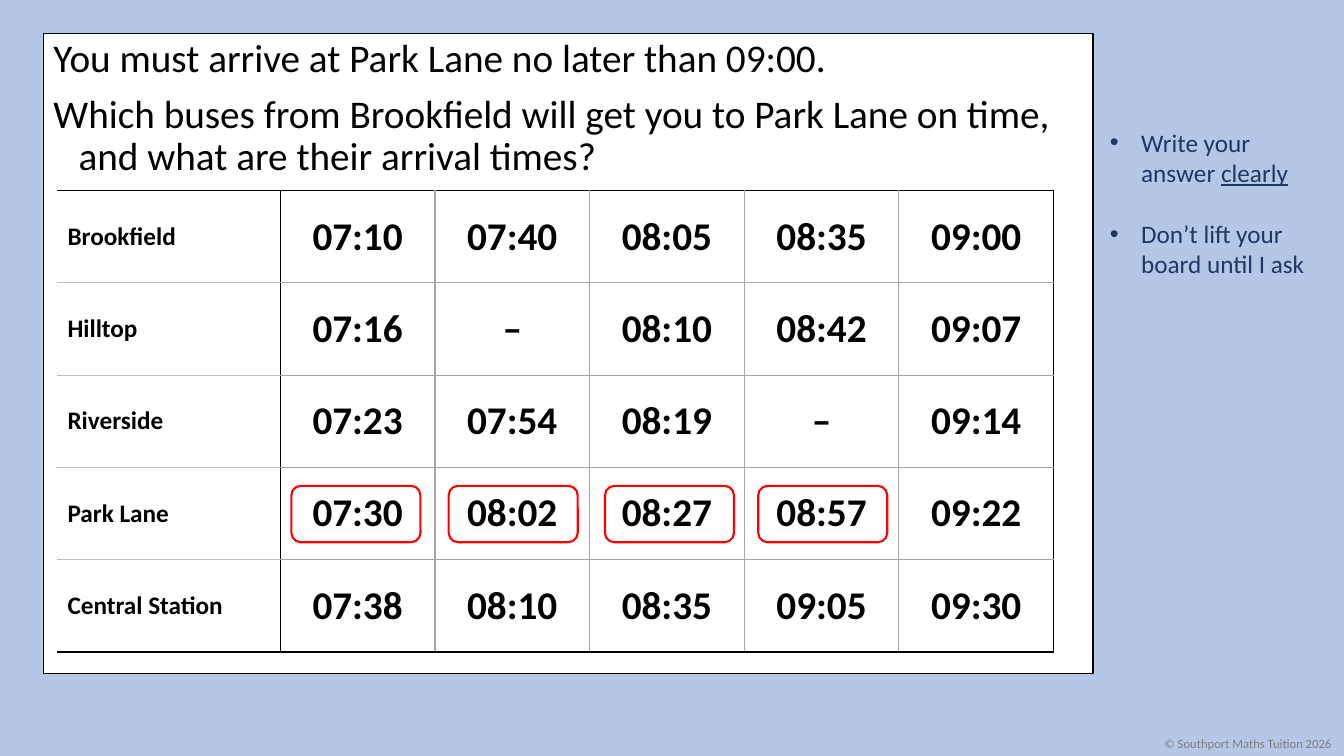
from dataclasses import dataclass

from lxml.etree import SubElement
from pptx import Presentation
from pptx.dml.color import RGBColor
from pptx.enum.shapes import MSO_SHAPE
from pptx.enum.text import MSO_ANCHOR, MSO_AUTO_SIZE, PP_ALIGN
from pptx.oxml.ns import qn
from pptx.util import Inches, Pt


@dataclass(frozen=True)
class Theme:
    font: str = "Calibri"
    back: str = "B4C7E7"
    white: str = "FFFFFF"
    black: str = "000000"
    navy: str = "203864"
    gray: str = "808080"
    grid: str = "A6A6A6"
    pale: str = "BFBFBF"
    red: str = "FF0000"
    large: int = 28
    small: int = 18
    tiny: int = 9


class Board:
    def __init__(self, theme, slide):
        self.theme = theme
        self.slide = slide
        fill = slide.background.fill
        fill.solid()
        fill.fore_color.rgb = RGBColor.from_string(theme.back)

    def run(self, para, text, size, color, bold=False, under=False):
        run = para.add_run()
        run.text = text
        font = run.font
        font.name, font.size = self.theme.font, Pt(size)
        font.bold, font.underline = bold, under
        font.color.rgb = RGBColor.from_string(color)

    def hang(self, para, inset, mark=None):
        props = para._p.get_or_add_pPr()
        props.set("marL", str(Inches(inset)))
        props.set("indent", str(-Inches(inset)))
        if mark:
            SubElement(props, qn("a:buFont"), typeface="Arial")
            SubElement(props, qn("a:buChar"), char=mark)
        else:
            SubElement(props, qn("a:buNone"))

    def paras(self, frame, count):
        return [frame.paragraphs[0]] + [frame.add_paragraph() for _ in range(count - 1)]

    def shape(self, kind, box, line, width, fill=None):
        shape = self.slide.shapes.add_shape(kind, *map(Inches, box))
        shape.shadow.inherit = False
        if fill:
            shape.fill.solid()
            shape.fill.fore_color.rgb = RGBColor.from_string(fill)
        else:
            shape.fill.background()
        shape.line.color.rgb = RGBColor.from_string(line)
        shape.line.width = Pt(width)

    def body(self, box, lines):
        shapes = self.slide.shapes
        title = shapes.title.element
        title.getparent().remove(title)
        body = self.slide.placeholders[1]
        body.left, body.top, body.width, body.height = map(Inches, box)
        # Bring the question in front of the panel
        body.element.getparent().append(body.element)
        frame = body.text_frame
        frame.auto_size = MSO_AUTO_SIZE.NONE
        for i, (para, text) in enumerate(zip(self.paras(frame, len(lines)), lines)):
            self.hang(para, 0.25)
            para.line_spacing = 0.9
            para.space_before = Pt(10 if i else 0)
            self.run(para, text, self.theme.large, self.theme.black)

    def label(self, box, wrap):
        frame = self.slide.shapes.add_textbox(*map(Inches, box)).text_frame
        frame.word_wrap = wrap
        return frame

    def notes(self, box, items):
        frame = self.label(box, True)
        for i, (para, runs) in enumerate(zip(self.paras(frame, len(items)), items)):
            self.hang(para, 0.31, "•")
            para.space_before = Pt(22 if i else 0)
            for text, under in runs:
                self.run(para, text, self.theme.small, self.theme.navy, under=under)

    def credit(self, box, text):
        para = self.label(box, False).paragraphs[0]
        self.run(para, text, self.theme.tiny, self.theme.gray)

    def edge(self, cell, side, color):
        props = cell._tc.get_or_add_tcPr()
        line = SubElement(props, qn(f"a:ln{side}"), w=str(Pt(1)))
        if color:
            fill = SubElement(line, qn("a:solidFill"))
            SubElement(fill, qn("a:srgbClr"), val=color)
        else:
            SubElement(line, qn("a:noFill"))

    def table(self, box, first, rows):
        theme = self.theme
        high, wide = len(rows), len(rows[0])
        table = self.slide.shapes.add_table(high, wide, *map(Inches, box)).table
        table.first_row = table.horz_banding = False
        for i, col in enumerate(table.columns):
            col.width = Inches((box[2] - first) / (wide - 1) if i else first)
        for r, row in enumerate(rows):
            table.rows[r].height = Inches(box[3] / high)
            for c, text in enumerate(row):
                cell = table.cell(r, c)
                cell.vertical_anchor = MSO_ANCHOR.MIDDLE
                inner = theme.grid if c else theme.pale
                # Black frame and stop divider, gray inner grid
                self.edge(cell, "L", (None, theme.black)[c] if c < 2 else theme.grid)
                self.edge(cell, "R", theme.black if c in (0, wide - 1) else theme.grid)
                self.edge(cell, "T", inner if r else theme.black)
                self.edge(cell, "B", inner if r < high - 1 else theme.black)
                cell.fill.background()
                para = cell.text_frame.paragraphs[0]
                para.alignment = PP_ALIGN.CENTER if c else PP_ALIGN.LEFT
                size = theme.large if c else theme.small
                self.run(para, text, size, theme.black, bold=True)


def main():
    deck = Presentation()
    deck.slide_width, deck.slide_height = Inches(13.33), Inches(7.5)
    theme = Theme()
    board = Board(theme, deck.slides.add_slide(deck.slide_layouts[1]))

    # Panel, side notes and credit
    panel = (0.43, 0.33, 10.41, 6.35)
    board.shape(MSO_SHAPE.RECTANGLE, panel, theme.black, 1, theme.white)
    board.notes((10.91, 1.21, 2.32, 1.62), [
        [("Write your answer ", False), ("clearly", True)],
        [("Don’t lift your board until I ask", False)],
    ])
    board.credit((11.45, 7.25, 1.88, 0.25), "© Southport Maths Tuition 2026")

    # Question
    board.body(panel, [
        "You must arrive at Park Lane no later than 09:00.",
        "Which buses from Brookfield will get you to Park Lane on time, "
        "and what are their arrival times?",
    ])

    # Bus times
    board.table((0.57, 1.89, 9.88, 4.58), 2.21, [
        ("Brookfield", "07:10", "07:40", "08:05", "08:35", "09:00"),
        ("Hilltop", "07:16", "–", "08:10", "08:42", "09:07"),
        ("Riverside", "07:23", "07:54", "08:19", "–", "09:14"),
        ("Park Lane", "07:30", "08:02", "08:27", "08:57", "09:22"),
        ("Central Station", "07:38", "08:10", "08:35", "09:05", "09:30"),
    ])

    # Rings round the answers
    for left in (2.89, 4.45, 6, 7.52):
        box = (left, 4.82, 1.28, 0.56)
        board.shape(MSO_SHAPE.ROUNDED_RECTANGLE, box, theme.red, 1.5)

    deck.save("out.pptx")


if __name__ == "__main__":
    main()
